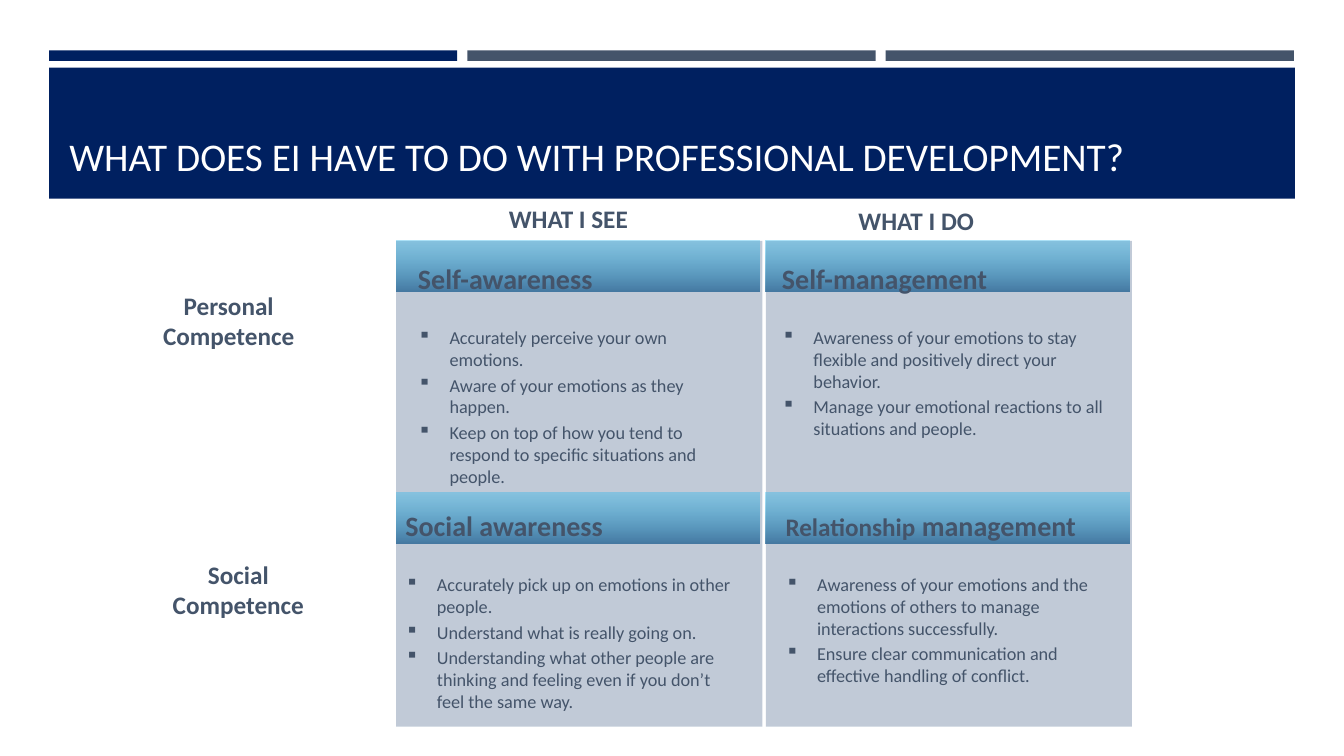
from lxml import etree
from pptx import Presentation
from pptx.dml.color import RGBColor
from pptx.enum import shapes, text
from pptx.oxml.ns import qn
from pptx.util import Pt

NAVY, SLATE, PANEL, WHITE = "002060", "44546A", "8497B0", "FFFFFF"
BAND_TOP, BAND_BOTTOM = "00B0F0", "004C84"
INSET = 6.6
INDENT = 22.5

# Each quadrant: column, row, left offset of the text, heading runs, points
QUADRANTS = [
    (0, 0, 9, [("Self-awareness", 20)], [
        "Accurately perceive your own emotions.",
        "Aware of your emotions as they happen.",
        "Keep on top of how you tend to respond to specific situations and people.",
    ]),
    (1, 0, 5, [("Self-management", 20)], [
        "Awareness of your emotions to stay flexible and positively direct your behavior.",
        "Manage your emotional reactions to all situations and people.",
    ]),
    (0, 1, 0, [("Social awareness", 20)], [
        "Accurately pick up on emotions in other people.",
        "Understand what is really going on.",
        "Understanding what other people are thinking and feeling even if you don’t "
        "feel the same way.",
    ]),
    (1, 1, 7.5, [("Relationship", 18), (" management", 20)], [
        "Awareness of your emotions and the emotions of others to manage "
        "interactions successfully.",
        "Ensure clear communication and effective handling of conflict.",
    ]),
]

LABELS = [
    ("Personal Competence", (80.6, 203.8, 165.6, 51)),
    ("Social Competence", (94.3, 396, 152, 51)),
    ("WHAT I SEE", (298, 141.8, 216, 30)),
    ("WHAT I DO", (546.5, 143.3, 216, 30)),
]


def color(hex_string):
    return RGBColor.from_string(hex_string)


def add_rect(slide, box, fills, opacities=()):
    """Draw a borderless rectangle; two fills make a top-to-bottom gradient."""
    rect = slide.shapes.add_shape(shapes.MSO_SHAPE.RECTANGLE, *map(Pt, box))
    rect.shadow.inherit = False
    rect.line.fill.background()
    if len(fills) == 1:
        rect.fill.solid()
        rect.fill.fore_color.rgb = color(fills[0])
    else:
        rect.fill.gradient()
        rect.fill.gradient_angle = 270
        for stop, hex_string in zip(rect.fill.gradient_stops, fills):
            stop.color.rgb = color(hex_string)
    for tint, opacity in zip(rect._element.spPr.iter(qn("a:srgbClr")), opacities):
        etree.SubElement(tint, qn("a:alpha"), val=str(opacity * 1000))


def add_text_frame(slide, box, inset=7.2, anchor=text.MSO_ANCHOR.TOP):
    frame = slide.shapes.add_textbox(*map(Pt, box)).text_frame
    frame.word_wrap = True
    frame.vertical_anchor = anchor
    frame.margin_left = frame.margin_right = Pt(inset)
    frame.margin_top = frame.margin_bottom = Pt(3.6)
    return frame


def write(paragraph, words, size=18, hex_string=SLATE, bold=False, align=None):
    run = paragraph.add_run()
    run.text = words
    run.font.name = "Calibri"
    run.font.size = Pt(size)
    run.font.bold = bold
    run.font.color.rgb = color(hex_string)
    if align is not None:
        paragraph.alignment = align


def add_bullet(paragraph):
    properties = paragraph._p.get_or_add_pPr()
    properties.set("marL", str(Pt(INDENT)))
    properties.set("indent", str(-Pt(INDENT)))
    etree.SubElement(properties, qn("a:buChar"), char="▪")


def add_header(slide, left, top, width):
    bar_width, pitch = 291.6, 298.8
    for i, bar_color in enumerate([NAVY, SLATE, SLATE]):
        add_rect(slide, (left + i * pitch, top, bar_width, 7.5), [bar_color])
    add_rect(slide, (left, top + 12.4, width, 93.6), [NAVY])
    title = add_text_frame(slide, (left + 7.5, top + 15.8, width - 22, 80),
                           anchor=text.MSO_ANCHOR.BOTTOM)
    write(title.paragraphs[0], "WHAT DOES EI HAVE TO DO WITH PROFESSIONAL DEVELOPMENT?",
          size=28, hex_string=WHITE)


def add_quadrant(slide, left, top, offset, heading, points):
    frame = add_text_frame(slide, (left + offset, top, 246, 150), inset=INSET)
    first = frame.paragraphs[0]
    first.space_after = Pt(20)
    for words, size in heading:
        write(first, words, size=size, bold=True)
    for point in points:
        paragraph = frame.add_paragraph()
        paragraph.space_before = Pt(2.6)
        add_bullet(paragraph)
        write(paragraph, point, size=13)


def add_matrix(slide, left, top):
    column_pitch, row_pitch = 264, 180
    for column in range(2):
        add_rect(slide, (left + column * column_pitch, top, 261.5, 347), [PANEL], [50])
    for column, row, *_ in QUADRANTS:
        band = (left + column * column_pitch, top + row * row_pitch, 259.5, 36)
        add_rect(slide, band, [BAND_TOP, BAND_BOTTOM], [30, 65])
    for column, row, *content in QUADRANTS:
        add_quadrant(slide, left + column * column_pitch,
                     top + 11 + row * (row_pitch - 3.5), *content)


def add_labels(slide):
    for words, box in LABELS:
        label = add_text_frame(slide, box)
        write(label.paragraphs[0], words, bold=True, align=text.PP_ALIGN.CENTER)


def main():
    deck = Presentation()
    deck.slide_width, deck.slide_height = Pt(960), Pt(540)
    slide = deck.slides.add_slide(deck.slide_layouts[6])
    add_header(slide, 35, 36, 890)
    add_matrix(slide, 283, 172)
    add_labels(slide)
    deck.save("out.pptx")


if __name__ == "__main__":
    main()
